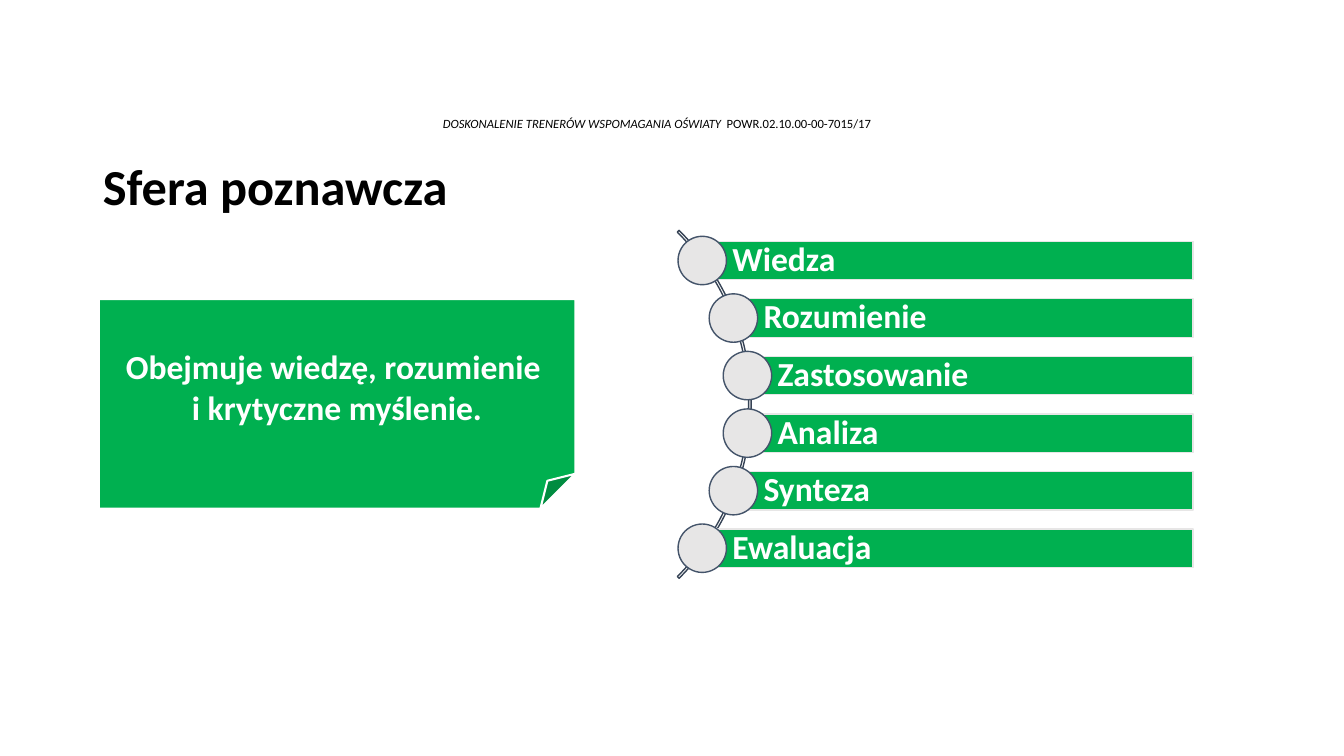
from math import sqrt

from pptx import Presentation
from pptx.dml.color import RGBColor
from pptx.enum.shapes import MSO_SHAPE as Preset
from pptx.enum.text import MSO_ANCHOR as Anchor, MSO_AUTO_SIZE as AutoSize, PP_ALIGN as Align
from pptx.util import Cm, Pt

COLORS = {
    "green": "00B050",
    "grey": "E7E6E6",
    "slate": "44546A",
    "arc": "364355",
    "white": "FFFFFF",
    "black": "000000",
}
LEVELS = ["Wiedza", "Rozumienie", "Zastosowanie", "Analiza", "Synteza", "Ewaluacja"]

# Geometry of the level list, in centimetres
ARC_X, ARC_Y, ARC_SIZE = 12.73, 10.19, 12.4
DOT_ORBIT, DOT_SIZE = 6.15, 1.22
LEVEL_PITCH, BAR_HEIGHT, BAR_RIGHT = 1.45, 0.97, 30.07


def color(name):
    return RGBColor.from_string(COLORS[name])


def apply_format(target, values):
    for attribute, value in values.items():
        setattr(target, attribute, value)


def add_run(paragraph, text, size, tone, **style):
    run = paragraph.add_run()
    run.text = text
    apply_format(run.font, {"name": "Calibri", "size": Pt(size), **style})
    run.font.color.rgb = color(tone)


def write_line(frame, text, size, tone, align, spacing=1.0):
    """Write one bold paragraph; a vertical tab in the text breaks the line."""
    paragraph = frame.paragraphs[0]
    apply_format(paragraph, {"alignment": align, "line_spacing": spacing})
    for index, part in enumerate(text.split("\v")):
        if index:
            paragraph.add_line_break()
        add_run(paragraph, part, size, tone, bold=True)


def add_figure(slide, preset, box, fill, line, width=1):
    figure = slide.shapes.add_shape(preset, *map(Cm, box))
    figure.shadow.inherit = False
    if fill:
        figure.fill.solid()
        figure.fill.fore_color.rgb = color(fill)
    else:
        figure.fill.background()
    figure.line.color.rgb = color(line)
    figure.line.width = Pt(width)
    return figure


def add_project_header(slide):
    header = slide.shapes.add_textbox(Cm(2), Cm(1.17), Cm(29.11), Cm(3.1))
    apply_format(header.text_frame, {"word_wrap": True, "margin_top": Cm(1.8)})
    paragraph = header.text_frame.paragraphs[0]
    apply_format(paragraph, {"alignment": Align.CENTER, "line_spacing": 0.9})
    add_run(paragraph, "DOSKONALENIE TRENERÓW WSPOMAGANIA OŚWIATY  ", 9, "black", italic=True)
    add_run(paragraph, "POWR.02.10.00-00-7015/17", 9, "black", italic=False)


def set_title(slide, text):
    title = slide.shapes.title
    apply_format(title, {"left": Cm(2.34), "top": Cm(3.78), "width": Cm(9.3), "height": Cm(1.8)})
    apply_format(title.text_frame, {
        "word_wrap": False, "auto_size": AutoSize.NONE, "vertical_anchor": Anchor.TOP,
    })
    write_line(title.text_frame, text, 36, "black", Align.LEFT)


def add_definition(slide, text):
    note = add_figure(slide, Preset.FOLDED_CORNER, (2.49, 7.54, 12.01, 5.28), "green", "white", 1.5)
    apply_format(note.text_frame, {"word_wrap": True, "vertical_anchor": Anchor.MIDDLE})
    write_line(note.text_frame, text, 24, "white", Align.CENTER)


def add_arc(slide):
    corner = (ARC_X - ARC_SIZE / 2, ARC_Y - ARC_SIZE / 2)
    arc = add_figure(slide, Preset.BLOCK_ARC, (*corner, ARC_SIZE, ARC_SIZE), None, "arc")
    for index, value in enumerate((189, 27, 0.005)):
        arc.adjustments[index] = value


def add_level(slide, label, offset):
    """Place a bar and its dot on the arc, offset vertically from the arc's centre."""
    x = ARC_X + sqrt(DOT_ORBIT ** 2 - offset ** 2)
    y = ARC_Y + offset
    bar_box = (x, y - BAR_HEIGHT / 2, BAR_RIGHT - x, BAR_HEIGHT)
    bar = add_figure(slide, Preset.RECTANGLE, bar_box, "green", "grey")
    apply_format(bar.text_frame, {
        "margin_left": Cm(0.76), "margin_right": Cm(0.18), "margin_top": 0,
        "margin_bottom": 0, "vertical_anchor": Anchor.MIDDLE, "word_wrap": True,
    })
    write_line(bar.text_frame, label, 24, "white", Align.LEFT, 0.9)
    dot_box = (x - DOT_SIZE / 2, y - DOT_SIZE / 2, DOT_SIZE, DOT_SIZE)
    add_figure(slide, Preset.OVAL, dot_box, "grey", "slate")


def main():
    deck = Presentation()
    apply_format(deck, {"slide_width": Cm(33.87), "slide_height": Cm(19.05)})
    slide = deck.slides.add_slide(deck.slide_layouts[5])
    add_project_header(slide)
    set_title(slide, "Sfera poznawcza")
    add_arc(slide)
    for index, label in enumerate(LEVELS):
        add_level(slide, label, (index - (len(LEVELS) - 1) / 2) * LEVEL_PITCH)
    add_definition(slide, "Obejmuje wiedzę, rozumienie \vi krytyczne myślenie.")
    deck.save("out.pptx")


if __name__ == "__main__":
    main()
